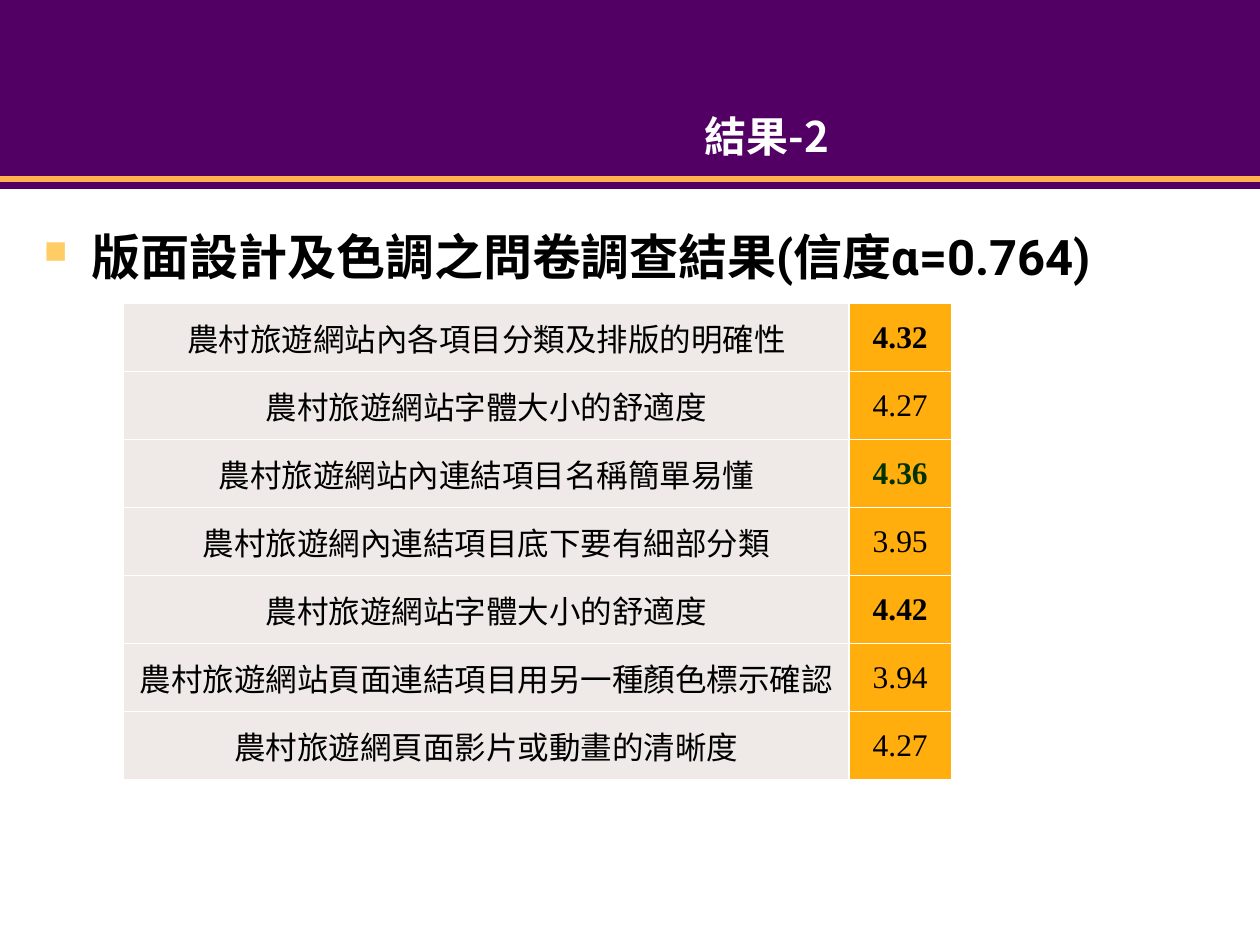
from lxml.etree import SubElement
from pptx import Presentation
from pptx.dml.color import RGBColor
from pptx.enum.shapes import MSO_CONNECTOR, MSO_SHAPE
from pptx.enum.text import MSO_ANCHOR, PP_ALIGN
from pptx.oxml.ns import qn
from pptx.util import Inches, Pt

COLORS = {
    "purple": "520063",
    "gold": "FFB24D",
    "bullet": "FFCC66",
    "item": "EFEAE8",
    "score": "FFAE0D",
    "white": "FFFFFF",
    "black": "000000",
    "green": "003300",
}
CJK = "Noto Sans CJK SC"
SURVEY = [
    ("農村旅遊網站內各項目分類及排版的明確性", "4.32", True, "black"),
    ("農村旅遊網站字體大小的舒適度", "4.27", False, "black"),
    ("農村旅遊網站內連結項目名稱簡單易懂", "4.36", True, "green"),
    ("農村旅遊網內連結項目底下要有細部分類", "3.95", False, "black"),
    ("農村旅遊網站字體大小的舒適度", "4.42", True, "black"),
    ("農村旅遊網站頁面連結項目用另一種顏色標示確認", "3.94", False, "black"),
    ("農村旅遊網頁面影片或動畫的清晰度", "4.27", False, "black"),
]


def rgb(name):
    return RGBColor.from_string(COLORS[name])


def write(frame, text, size=18, font="Roboto", color="black", bold=False,
          align=PP_ALIGN.CENTER):
    paragraph = frame.paragraphs[0]
    paragraph.alignment = align
    run = paragraph.add_run()
    run.text = text
    run.font.size = Pt(size)
    run.font.bold = bold
    run.font.name = font
    run.font.color.rgb = rgb(color)
    SubElement(run.font._element, qn("a:ea"), typeface=CJK)
    return paragraph


def add_band(slide, top, height):
    band = slide.shapes.add_shape(
        MSO_SHAPE.RECTANGLE, 0, Inches(top), Inches(10), Inches(height))
    band.shadow.inherit = False
    band.fill.solid()
    band.fill.fore_color.rgb = rgb("purple")
    band.line.fill.background()


def add_rule(slide, top):
    rule = slide.shapes.add_connector(
        MSO_CONNECTOR.STRAIGHT, 0, Inches(top), Inches(10), Inches(top))
    rule.line.color.rgb = rgb("gold")
    rule.line.width = Pt(3)
    SubElement(rule._element.spPr, qn("a:effectLst"))


def add_text(slide, left, top, width, height, text, **style):
    box = slide.shapes.add_textbox(
        Inches(left), Inches(top), Inches(width), Inches(height))
    box.text_frame.word_wrap = True
    return write(box.text_frame, text, **style)


def add_bullet(paragraph):
    props = paragraph._p.get_or_add_pPr()
    props.set("marL", str(Inches(0.38)))
    props.set("indent", str(Inches(-0.38)))
    tint = SubElement(props, qn("a:buClr"))
    SubElement(tint, qn("a:srgbClr"), val=COLORS["bullet"])
    SubElement(props, qn("a:buSzPct"), val="65000")
    SubElement(props, qn("a:buChar"), char="■")


def style_cell(cell, fill):
    props = cell._tc.get_or_add_tcPr()
    for side in ("lnL", "lnR", "lnT", "lnB"):
        border = SubElement(props, qn(f"a:{side}"), w=str(Pt(1)))
        paint = SubElement(border, qn("a:solidFill"))
        SubElement(paint, qn("a:srgbClr"), val=COLORS["white"])
    cell.fill.solid()
    cell.fill.fore_color.rgb = rgb(fill)
    cell.vertical_anchor = MSO_ANCHOR.MIDDLE


def add_survey(slide):
    table = slide.shapes.add_table(
        len(SURVEY), 2, Inches(0.98), Inches(2.41),
        Inches(6.57), Inches(0.54 * len(SURVEY))).table
    table.columns[0].width = Inches(5.76)
    table.columns[1].width = Inches(0.81)
    for row, (item, score, bold, color) in enumerate(SURVEY):
        item_cell, score_cell = table.cell(row, 0), table.cell(row, 1)
        style_cell(item_cell, "item")
        write(item_cell.text_frame, item)
        style_cell(score_cell, "score")
        write(score_cell.text_frame, score, font="Times New Roman",
              color=color, bold=bold)


def main():
    deck = Presentation()
    deck.slide_width, deck.slide_height = Inches(10), Inches(7.5)
    slide = deck.slides.add_slide(deck.slide_layouts[6])
    add_band(slide, 0, 1.42)
    add_band(slide, 1.42, 0.08)
    add_rule(slide, 1.42)
    add_text(slide, 2.42, 0.83, 7.33, 0.67, "結果-2",
             size=24, font=CJK, color="white", bold=True)
    heading = add_text(slide, 0.25, 1.75, 9.5, 0.82,
                       "版面設計及色調之問卷調查結果(信度α=0.764)",
                       size=28, bold=True, align=PP_ALIGN.LEFT)
    add_bullet(heading)
    add_survey(slide)
    deck.save("out.pptx")


if __name__ == "__main__":
    main()
